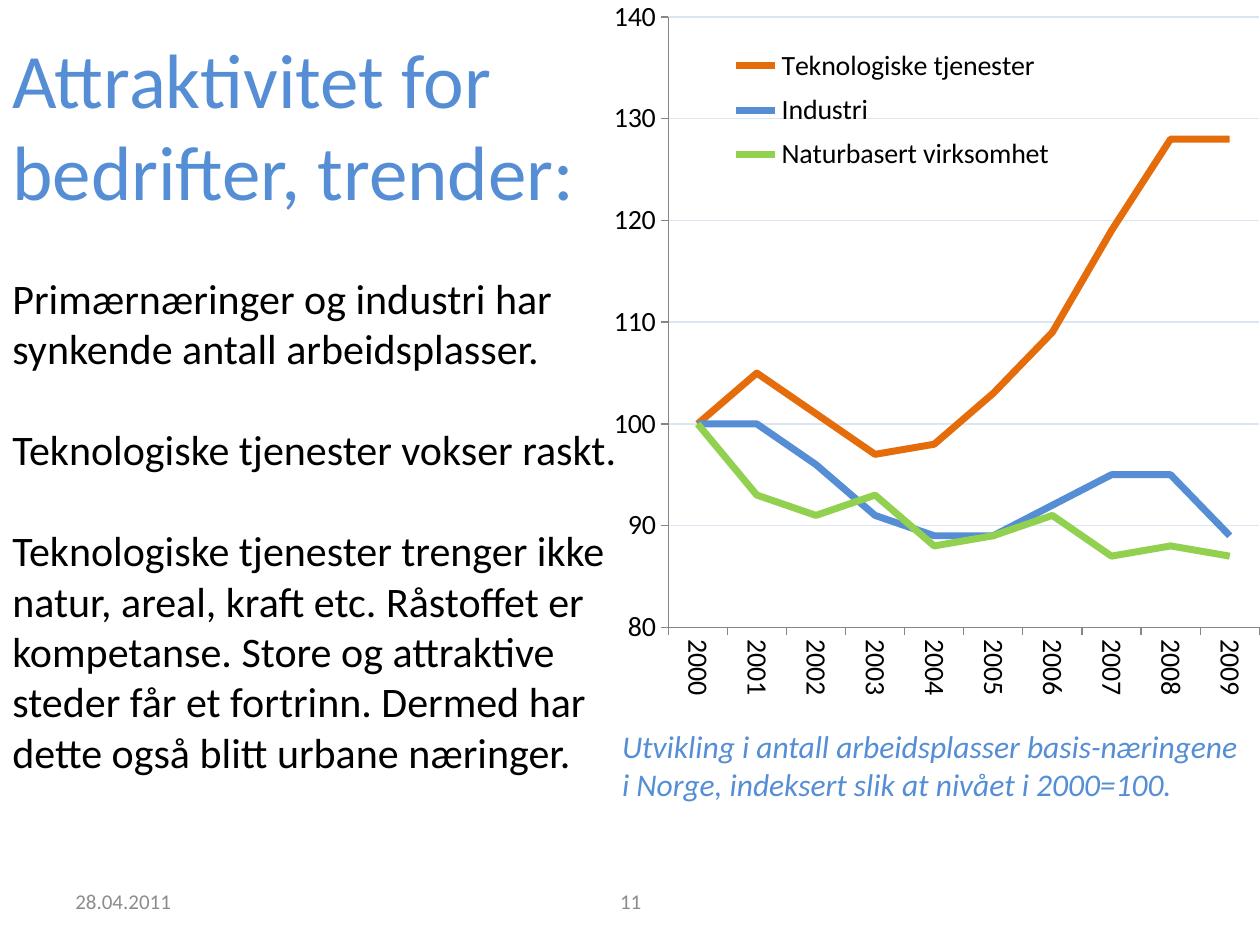
from dataclasses import dataclass

from lxml.etree import SubElement
from pptx import Presentation
from pptx.chart.data import CategoryChartData
from pptx.dml.color import RGBColor
from pptx.enum.chart import XL_CHART_TYPE as ChartType
from pptx.enum.chart import XL_LEGEND_POSITION as LegendPos
from pptx.enum.chart import XL_TICK_MARK as Tick
from pptx.enum.shapes import MSO_SHAPE as Shape
from pptx.enum.text import MSO_ANCHOR as Anchor
from pptx.enum.text import PP_ALIGN as Align
from pptx.oxml.ns import qn
from pptx.util import Cm, Pt

FONT = "Calibri"
BLACK = RGBColor(0x00, 0x00, 0x00)
WHITE = RGBColor(0xFF, 0xFF, 0xFF)
GREY = RGBColor(0x8C, 0x8C, 0x8C)
AXIS_GREY = RGBColor(0x86, 0x86, 0x86)
GRID = RGBColor(0xDC, 0xE6, 0xF2)
BLUE = RGBColor(0x55, 0x8E, 0xD5)
ORANGE = RGBColor(0xE4, 0x6C, 0x0A)
GREEN = RGBColor(0x92, 0xD0, 0x50)


@dataclass(frozen=True)
class Box:
    left: float
    top: float
    width: float
    height: float

    def lengths(self) -> list:
        return [Cm(v) for v in (self.left, self.top, self.width, self.height)]


@dataclass(frozen=True)
class TextBlock:
    box: Box
    paragraphs: tuple
    size: int
    color: RGBColor
    italic: bool = False
    align: Align = Align.LEFT
    anchor: Anchor = Anchor.TOP
    gap: float = 0
    fill: RGBColor | None = None


@dataclass(frozen=True)
class Trend:
    name: str
    values: tuple
    color: RGBColor


CHART_BOX = Box(12.29, 0, 13.11, 14.53)
PLOT_AREA = Box(0.09, 0.02, 0.91, 0.85)
LEGEND_AREA = Box(0.18, 0.05, 0.51, 0.2)

YEARS = [str(year) for year in range(2000, 2010)]
TRENDS = [
    Trend("Teknologiske tjenester",
          (100, 105, 101, 97, 98, 103, 109, 119, 128, 128), ORANGE),
    Trend("Industri", (100, 100, 96, 91, 89, 89, 92, 95, 95, 89), BLUE),
    Trend("Naturbasert virksomhet",
          (100, 93, 91, 93, 88, 89, 91, 87, 88, 87), GREEN),
]

TEXTS = [
    TextBlock(Box(1.27, 17.65, 5.92, 1.02), ("28.04.2011",), 12, GREY,
              anchor=Anchor.MIDDLE),
    TextBlock(Box(8.69, 17.65, 8.05, 1.02), ("11",), 12, GREY,
              align=Align.CENTER, anchor=Anchor.MIDDLE),
    TextBlock(Box(12.29, 14.53, 13.11, 2.57),
              ("Utvikling i antall arbeidsplasser basis-næringene i Norge, "
               "indeksert slik at nivået i 2000=100.",),
              18, BLUE, italic=True),
    TextBlock(Box(0, 5.36, 12.9, 12.57),
              ("Primærnæringer og industri har synkende antall arbeidsplasser.",
               "Teknologiske tjenester vokser raskt.",
               "Teknologiske tjenester trenger ikke natur, areal, kraft etc. "
               "Råstoffet er kompetanse. Store og attraktive steder får et "
               "fortrinn. Dermed har dette også blitt urbane næringer."),
              24, BLACK, gap=29),
    TextBlock(Box(0, 0.51, 12.09, 4.01),
              ("Attraktivitet for bedrifter, trender:",), 44, BLUE, fill=WHITE),
]


def add_text(slide, block: TextBlock) -> None:
    if block.fill is None:
        sp = slide.shapes.add_textbox(*block.box.lengths())
    else:
        sp = slide.shapes.add_shape(Shape.RECTANGLE, *block.box.lengths())
        sp.shadow.inherit = False
        sp.fill.solid()
        sp.fill.fore_color.rgb = block.fill
        sp.line.fill.background()
    tf = sp.text_frame
    tf.word_wrap = True
    tf.vertical_anchor = block.anchor
    for i, text in enumerate(block.paragraphs):
        p = tf.add_paragraph() if i else tf.paragraphs[0]
        p.alignment = block.align
        p.space_before = Pt(block.gap if i else 0)
        r = p.add_run()
        r.text = text
        r.font.name = FONT
        r.font.size = Pt(block.size)
        r.font.italic = block.italic
        r.font.color.rgb = block.color


def set_layout(parent, index: int, area: Box, inner: bool = False) -> None:
    for old in parent.findall(qn("c:layout")):
        parent.remove(old)
    layout = SubElement(parent, qn("c:layout"))
    parent.insert(index, layout)
    manual = SubElement(layout, qn("c:manualLayout"))
    settings = {"layoutTarget": "inner"} if inner else {}
    settings |= {"xMode": "edge", "yMode": "edge", "x": area.left,
                 "y": area.top, "w": area.width, "h": area.height}
    for tag, value in settings.items():
        SubElement(manual, qn(f"c:{tag}")).set("val", str(value))


def style_axis(axis) -> None:
    axis.major_tick_mark = Tick.OUTSIDE
    axis.minor_tick_mark = Tick.NONE
    axis.format.line.color.rgb = AXIS_GREY
    axis.format.line.width = Pt(0.75)
    axis.tick_labels.font.size = Pt(16)


def add_trend_chart(slide) -> None:
    data = CategoryChartData()
    data.categories = YEARS
    for trend in TRENDS:
        data.add_series(trend.name, trend.values)
    chart = slide.shapes.add_chart(
        ChartType.LINE, *CHART_BOX.lengths(), data).chart
    chart.has_title = False
    chart.font.name = FONT
    chart.font.size = Pt(16)
    chart.font.color.rgb = BLACK

    chart.plots[0].vary_by_categories = False
    for series, trend in zip(chart.plots[0].series, TRENDS):
        series.smooth = False
        series.format.line.color.rgb = trend.color
        series.format.line.width = Pt(4)

    years, index = chart.category_axis, chart.value_axis
    style_axis(years)
    style_axis(index)
    years.has_major_gridlines = False
    body = years._element.find(f"{qn('c:txPr')}/{qn('a:bodyPr')}")
    body.set("rot", "5400000")
    body.set("vert", "horz")
    index.minimum_scale = 80
    index.maximum_scale = 140
    index.major_unit = 10
    index.tick_labels.number_format = "0"
    index.tick_labels.number_format_is_linked = False
    index.has_major_gridlines = True
    grid = index.major_gridlines.format.line
    grid.color.rgb = GRID
    grid.width = Pt(0.75)

    chart.has_legend = True
    chart.legend.position = LegendPos.RIGHT
    chart.legend.include_in_layout = True
    chart.legend.font.size = Pt(16)
    set_layout(chart.legend._element, 1, LEGEND_AREA)
    set_layout(years._element.getparent(), 0, PLOT_AREA, inner=True)


def main() -> None:
    prs = Presentation()
    prs.slide_width, prs.slide_height = Cm(25.4), Cm(19.05)
    s = prs.slides.add_slide(prs.slide_layouts[6])
    add_trend_chart(s)
    for block in TEXTS:
        add_text(s, block)
    prs.save("out.pptx")


if __name__ == "__main__":
    main()
